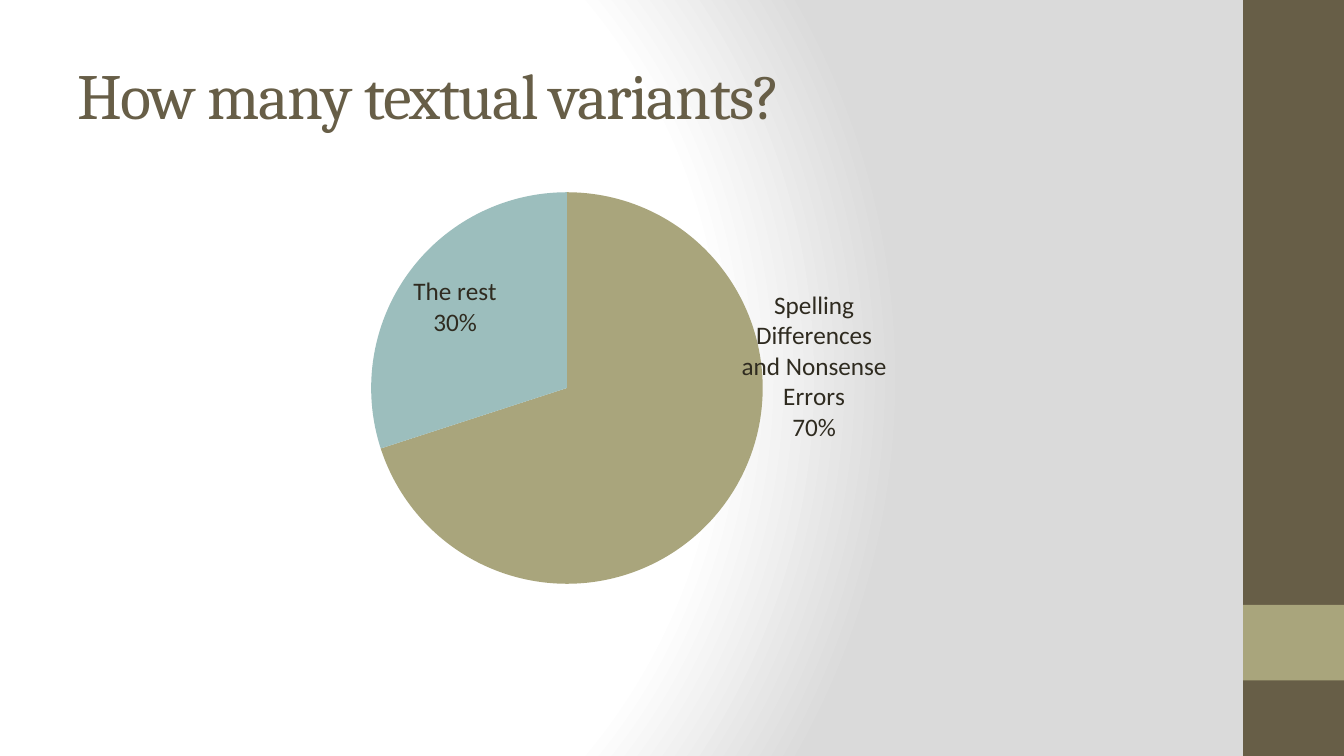
from dataclasses import dataclass

import lxml.etree
import pptx
import pptx.chart.chart
import pptx.chart.data
import pptx.dml.color
import pptx.enum.chart
import pptx.enum.shapes
import pptx.enum.text
import pptx.oxml
import pptx.oxml.ns
import pptx.slide
import pptx.util

EMU_PER_PX = 9525


@dataclass(frozen=True)
class Theme:
    olive_dark: str = "675E47"
    olive: str = "A9A57C"
    teal: str = "9CBEBD"
    ink: str = "2F2B20"
    white: str = "FFFFFF"
    grey: str = "DADADA"
    title_font: str = "Cambria"
    body_font: str = "Calibri"
    title_size: int = 46
    label_size: int = 18


@dataclass(frozen=True)
class Box:
    left: int
    top: int
    width: int
    height: int

    def emu(self) -> list[pptx.util.Emu]:
        return [px(n) for n in (self.left, self.top, self.width, self.height)]


@dataclass(frozen=True)
class Band:
    box: Box
    color: str


@dataclass(frozen=True)
class Slice:
    category: str
    percent: int
    color: str


THEME = Theme()
BANDS = [
    Band(Box(1184, 0, 96, 720), THEME.olive_dark),
    Band(Box(1184, 576, 96, 72), THEME.olive),
]
SLICES = [
    Slice("Spelling Differences and Nonsense Errors", 70, THEME.olive),
    Slice("The rest", 30, THEME.teal),
]
TITLE_BOX = Box(64, 29, 1067, 120)
CHART_BOX = Box(208, 168, 800, 504)


def px(length: int) -> pptx.util.Emu:
    return pptx.util.Emu(length * EMU_PER_PX)


def rgb(color: str) -> pptx.dml.color.RGBColor:
    return pptx.dml.color.RGBColor.from_string(color)


def set_background(slide: pptx.slide.Slide) -> None:
    """Fill the slide with a radial gradient centred left of the middle."""
    stops = [(0, THEME.white), (75, THEME.white), (100, THEME.grey)]
    stop_xml = "".join(
        f'<a:gs pos="{percent * 1000}"><a:srgbClr val="{color}"/></a:gs>'
        for percent, color in stops
    )
    background = pptx.oxml.parse_xml(
        f'<p:bg {pptx.oxml.ns.nsdecls("p", "a")}><p:bgPr>'
        f'<a:gradFill rotWithShape="1"><a:gsLst>{stop_xml}</a:gsLst>'
        '<a:path path="circle">'
        '<a:fillToRect l="20000" t="50000" r="100000" b="50000"/>'
        "</a:path></a:gradFill><a:effectLst/></p:bgPr></p:bg>"
    )
    slide.element.cSld.insert(0, background)


def add_band(slide: pptx.slide.Slide, band: Band) -> None:
    shape = slide.shapes.add_shape(
        pptx.enum.shapes.MSO_SHAPE.RECTANGLE, *band.box.emu()
    )
    shape.shadow.inherit = False
    shape.fill.solid()
    shape.fill.fore_color.rgb = rgb(band.color)
    shape.line.fill.background()


def add_title(slide: pptx.slide.Slide, text: str) -> None:
    frame = slide.shapes.add_textbox(*TITLE_BOX.emu()).text_frame
    frame.word_wrap = True
    frame.vertical_anchor = pptx.enum.text.MSO_ANCHOR.MIDDLE
    run = frame.paragraphs[0].add_run()
    run.text = text
    run.font.name = THEME.title_font
    run.font.size = pptx.util.Pt(THEME.title_size)
    run.font.color.rgb = rgb(THEME.olive_dark)
    run.font._element.set("spc", "-100")


def layout_xml(**values: float | str) -> lxml.etree._Element:
    settings = "".join(f'<c:{key} val="{value}"/>' for key, value in values.items())
    return pptx.oxml.parse_xml(
        f'<c:layout {pptx.oxml.ns.nsdecls("c")}>'
        f"<c:manualLayout>{settings}</c:manualLayout></c:layout>"
    )


def place_parts(chart: pptx.chart.chart.Chart) -> None:
    """Set the pie's area and move the first label over its right edge."""
    plot_area = chart.element.xpath("c:chart/c:plotArea")[0]
    for layout in plot_area.xpath("c:layout"):
        plot_area.remove(layout)
    plot_area.insert(0, layout_xml(
        layoutTarget="inner", xMode="edge", yMode="edge",
        x=0.18, y=0.03, w=0.47, h=0.74,
    ))
    label = chart.element.xpath(".//c:dLbl")[0]
    label.insert(1, layout_xml(x=0.2, y=-0.15))
    for name, value in (("showVal", "0"), ("showCatName", "1"), ("showPercent", "1")):
        label.find(pptx.oxml.ns.qn(f"c:{name}")).set("val", value)
    for flag in chart.element.xpath(".//c:showBubbleSize"):
        separator = lxml.etree.Element(pptx.oxml.ns.qn("c:separator"))
        separator.text = "\n"
        flag.addnext(separator)


def add_pie(slide: pptx.slide.Slide) -> None:
    data = pptx.chart.data.CategoryChartData()
    data.categories = [part.category for part in SLICES]
    data.add_series("Series 1", [part.percent for part in SLICES])
    chart = slide.shapes.add_chart(
        pptx.enum.chart.XL_CHART_TYPE.PIE, *CHART_BOX.emu(), data
    ).chart
    chart.has_legend = False
    chart.has_title = False
    chart.font.name = THEME.body_font
    chart.font.size = pptx.util.Pt(THEME.label_size)
    chart.font.color.rgb = rgb(THEME.ink)
    plot = chart.plots[0]
    plot.vary_by_categories = True
    series = plot.series[0]
    for index, part in enumerate(SLICES):
        fill = series.points[index].format.fill
        fill.solid()
        fill.fore_color.rgb = rgb(part.color)
    labels = series.data_labels
    labels.show_value = False
    labels.show_category_name = True
    labels.show_percentage = True
    labels.position = pptx.enum.chart.XL_LABEL_POSITION.INSIDE_END
    series.points[0].data_label.position = pptx.enum.chart.XL_LABEL_POSITION.CENTER
    place_parts(chart)


def main() -> None:
    presentation = pptx.Presentation()
    presentation.slide_width = px(1280)
    presentation.slide_height = px(720)
    slide = presentation.slides.add_slide(presentation.slide_layouts[6])
    set_background(slide)
    for band in BANDS:
        add_band(slide, band)
    add_title(slide, "How many textual variants?")
    add_pie(slide)
    presentation.save("out.pptx")


if __name__ == "__main__":
    main()
